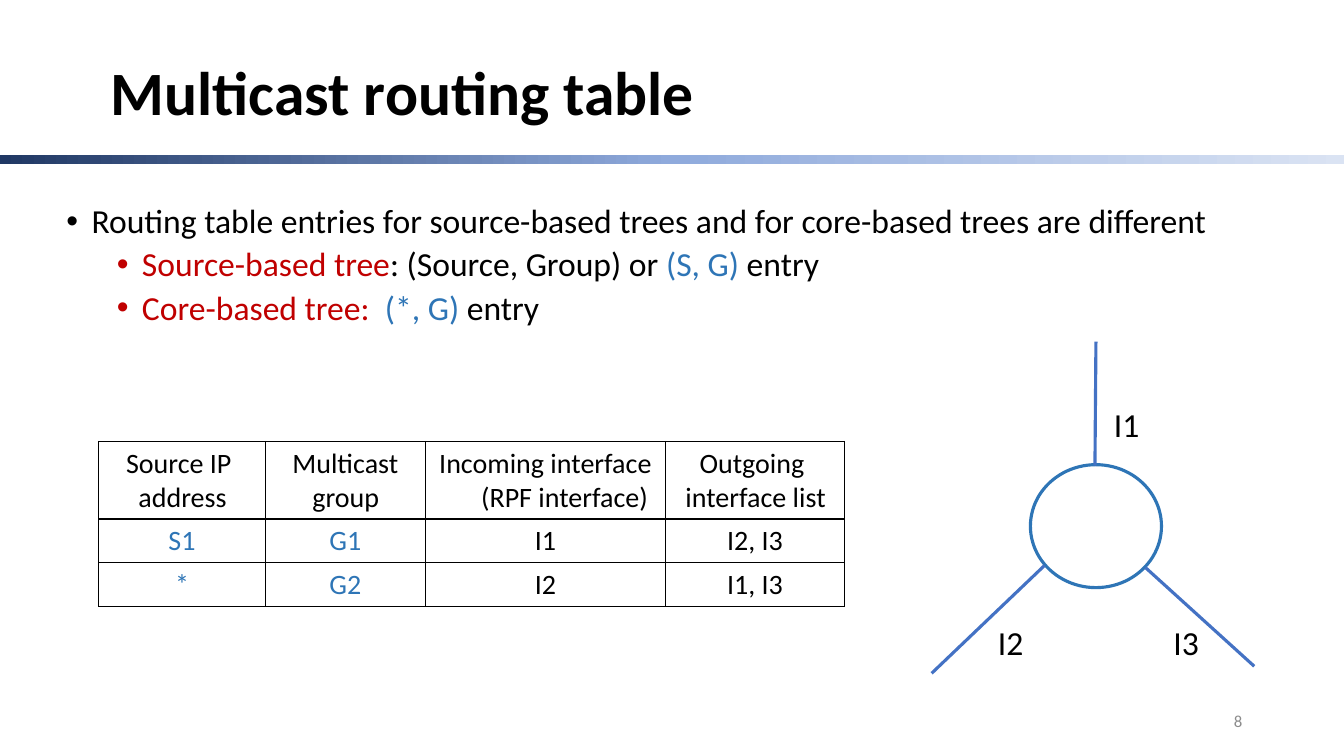
from copy import deepcopy

from pptx import Presentation
from pptx.dml.color import RGBColor
from pptx.enum.shapes import MSO_CONNECTOR, MSO_SHAPE
from pptx.enum.text import MSO_ANCHOR, MSO_AUTO_SIZE, PP_ALIGN
from pptx.oxml import parse_xml
from pptx.oxml.ns import nsdecls, qn
from pptx.util import Inches, Pt

BLACK, RED, BLUE, LINE_BLUE = "000000", "C00000", "2E75B6", "4472C4"
GREY, WHITE = "8C8C8C", "FFFFFF"

BULLETS = [
    (0, [("Routing table entries for source-based trees and for core-based trees are different", BLACK)]),
    (1, [("Source-based tree", RED), (": (Source, Group) or ", BLACK), ("(S, G) ", BLUE), ("entry", BLACK)]),
    (1, [("Core-based tree:  ", RED), ("(*, G)", BLUE), (" entry", BLACK)]),
]
ROUTES = [
    ["Source IP \naddress", "Multicast\ngroup", "Incoming interface\n(RPF interface)", "Outgoing \ninterface list"],
    ["S1", "G1", "I1", "I2, I3"],
    ["*", "G2", "I2", "I1, I3"],
]
COLUMN_WIDTHS = [1.65, 1.59, 2.38, 1.78]
ROW_HEIGHTS = [0.77, 0.43, 0.43]
LINKS = [(10.87, 3.39, 10.86, 4.62), (9.24, 6.68, 10.36, 5.61), (12.44, 6.61, 11.36, 5.63)]
LABELS = [("I1", 10.95, 3.96), ("I2", 9.8, 6.12), ("I3", 11.54, 6.12)]


def color(value):
    return RGBColor.from_string(value)


def set_all(target, values):
    for name, value in values.items():
        setattr(target, name, value)


def add_span(para, text, size, fill, bold=False):
    for index, line in enumerate(text.split("\n")):
        if index:
            para.add_line_break()
        span = para.add_run()
        span.text = line
        set_all(span.font, {"name": "Calibri", "size": Pt(size), "bold": bold})
        span.font.color.rgb = color(fill)


def set_indent(para, left, first):
    properties = para._p.get_or_add_pPr()
    properties.set("marL", str(Inches(left)))
    properties.set("indent", str(Inches(first)))
    return properties


def add_text_box(page, place, wrap=True):
    box = page.shapes.add_textbox(*map(Inches, place))
    box.text_frame.word_wrap = wrap
    return box.text_frame


def add_title(page, text):
    title = page.shapes.title
    set_all(title, {"left": Inches(1), "top": Inches(0.45), "width": Inches(12.33), "height": Inches(1)})
    title.text_frame.vertical_anchor = MSO_ANCHOR.MIDDLE
    para = title.text_frame.paragraphs[0]
    set_all(para, {"alignment": PP_ALIGN.LEFT, "line_spacing": 0.9})
    add_span(para, text, 44, BLACK, True)


def add_gradient_bar(page):
    bar = page.shapes.add_shape(MSO_SHAPE.RECTANGLE, 0, Inches(1.54), Inches(13.33), Inches(0.09))
    bar.shadow.inherit = False
    bar.line.fill.background()
    bar.fill.gradient()
    bar.fill.gradient_angle = 0
    stop_list = bar._element.spPr.find(qn("a:gradFill")).find(qn("a:gsLst"))
    stop_list.insert(1, deepcopy(stop_list[0]))
    for stop, (position, fill) in zip(bar.fill.gradient_stops, [(0, "203864"), (0.5, "8FAADC"), (1, "DAE3F3")]):
        stop.position = position
        stop.color.rgb = color(fill)


def add_bullets(page):
    frame = add_text_box(page, (0.56, 1.98, 11.89, 5.33))
    for index, (level, spans) in enumerate(BULLETS):
        para = frame.add_paragraph() if index else frame.paragraphs[0]
        set_all(para, {"level": level, "line_spacing": 0.9, "space_before": Pt(5 if level else 10)})
        properties = set_indent(para, 0.25 + 0.5 * level, -0.25)
        properties.append(parse_xml(f'<a:buFont {nsdecls("a")} typeface="Arial"/>'))
        properties.append(parse_xml(f'<a:buChar {nsdecls("a")} char="•"/>'))
        for text, fill in spans:
            add_span(para, text, 24, fill)


def add_borders(cell):
    properties = cell._tc.get_or_add_tcPr()
    for index, side in enumerate("LRTB"):
        properties.insert(index, parse_xml(
            f'<a:ln{side} {nsdecls("a")} w="{Pt(1)}"><a:solidFill>'
            f'<a:srgbClr val="{BLACK}"/></a:solidFill></a:ln{side}>'))


def add_routing_table(page):
    frame = page.shapes.add_table(
        len(ROW_HEIGHTS), len(COLUMN_WIDTHS), Inches(0.98), Inches(4.38),
        Inches(sum(COLUMN_WIDTHS)), Inches(sum(ROW_HEIGHTS)))
    table = frame.table
    set_all(table, {"first_row": False, "horz_banding": False})
    for column, width in zip(table.columns, COLUMN_WIDTHS):
        column.width = Inches(width)
    for row, height in zip(table.rows, ROW_HEIGHTS):
        row.height = Inches(height)
    for row, texts in enumerate(ROUTES):
        for column, text in enumerate(texts):
            cell = table.cell(row, column)
            cell.fill.background()
            add_borders(cell)
            para = cell.text_frame.paragraphs[0]
            para.alignment = PP_ALIGN.CENTER
            indent = 0.01 if row == 0 and column != 2 else 0.38
            set_indent(para, indent, -indent)
            add_span(para, text, 20, BLUE if row and column < 2 else BLACK)


def add_router(page):
    router = page.shapes.add_shape(MSO_SHAPE.OVAL, Inches(10.22), Inches(4.61), Inches(1.3), Inches(1.22))
    router.shadow.inherit = False
    router.fill.solid()
    router.fill.fore_color.rgb = color(WHITE)
    router.line.color.rgb = color(BLUE)
    router.line.width = Pt(2.25)


def add_link(page, ends):
    link = page.shapes.add_connector(MSO_CONNECTOR.STRAIGHT, *map(Inches, ends))
    link.line.color.rgb = color(LINE_BLUE)
    link.line.width = Pt(2.25)
    link._element.spPr.append(parse_xml(f'<a:effectLst {nsdecls("a")}/>'))


def add_label(page, text, left, top):
    frame = add_text_box(page, (left, top, 0.46, 0.5), False)
    frame.auto_size = MSO_AUTO_SIZE.SHAPE_TO_FIT_TEXT
    add_span(frame.paragraphs[0], text, 24, BLACK)


def add_page_number(page, text):
    frame = add_text_box(page, (9.42, 6.95, 3, 0.4))
    frame.vertical_anchor = MSO_ANCHOR.MIDDLE
    frame.paragraphs[0].alignment = PP_ALIGN.RIGHT
    add_span(frame.paragraphs[0], text, 12, GREY)


def main():
    deck = Presentation()
    set_all(deck, {"slide_width": Inches(13.33), "slide_height": Inches(7.5)})
    page = deck.slides.add_slide(deck.slide_layouts[5])
    add_gradient_bar(page)
    add_title(page, "Multicast routing table")
    add_bullets(page)
    add_routing_table(page)
    add_page_number(page, "8")
    add_router(page)
    for ends in LINKS:
        add_link(page, ends)
    for label in LABELS:
        add_label(page, *label)
    deck.save("out.pptx")


if __name__ == "__main__":
    main()
